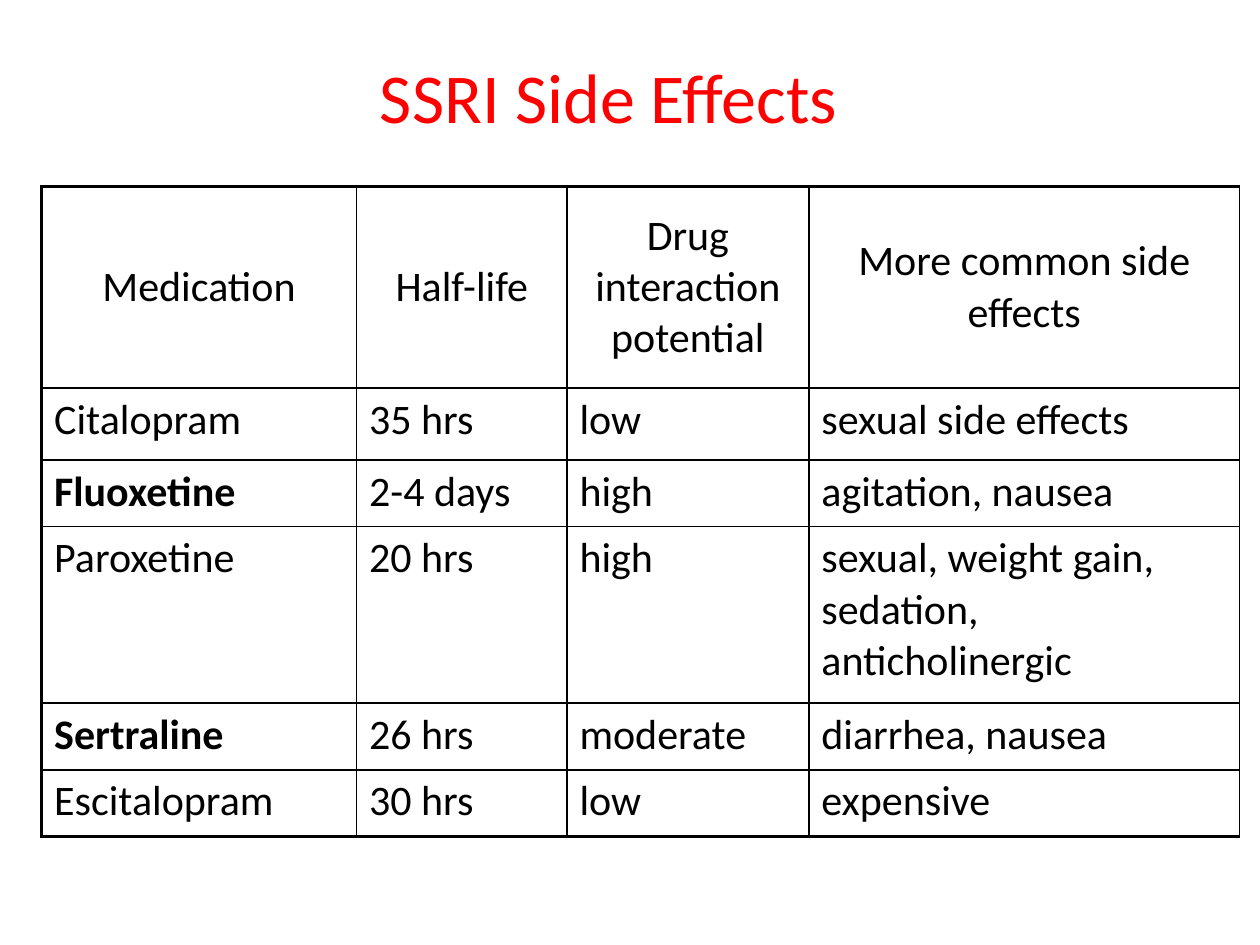
"""Build the SSRI side effects slide with one bordered comparison table."""
from dataclasses import dataclass

from lxml.etree import SubElement
from pptx import Presentation
from pptx.dml.color import RGBColor
from pptx.enum.text import MSO_ANCHOR as Anchor, PP_ALIGN as Align
from pptx.oxml.ns import qn
from pptx.util import Inches, Pt

TITLE = "SSRI Side Effects"
ROWS = [
    ("Medication", "Half-life", "Drug interaction potential", "More common side effects"),
    ("Citalopram", "35 hrs", "low", "sexual side effects"),
    ("Fluoxetine", "2-4 days", "high", "agitation, nausea"),
    ("Paroxetine", "20 hrs", "high", "sexual, weight gain, sedation, anticholinergic"),
    ("Sertraline", "26 hrs", "moderate", "diarrhea, nausea"),
    ("Escitalopram", "30 hrs", "low", "expensive"),
]
BOLD_NAMES = {"Fluoxetine", "Sertraline"}
COLUMN_WIDTHS = [2.5, 1.67, 1.92, 3.42]
ROW_HEIGHTS = [1.6, 0.57, 0.53, 1.4, 0.53, 0.53]
LEFT, TITLE_TOP, TABLE_TOP = 0.33, 0.25, 1.48
TITLE_WIDTH, TITLE_HEIGHT = 9, 1.02


@dataclass(frozen=True)
class Theme:
    font: str = "Calibri"
    title_color: str = "FF0000"
    ink: str = "000000"
    title_size: int = 40
    body_size: int = 24
    outer_line: float = 2.25
    inner_line: float = 1


THEME = Theme()


def write(text_frame, text, size, color, align, bold=False):
    text_frame.text = text
    text_frame.word_wrap = True
    paragraph = text_frame.paragraphs[0]
    paragraph.alignment = align
    font = paragraph.runs[0].font
    font.name, font.size, font.bold = THEME.font, Pt(size), bold
    font.color.rgb = RGBColor.from_string(color)


def set_borders(cell, widths):
    properties = cell._tc.get_or_add_tcPr()
    for side, width in widths.items():
        line = SubElement(properties, qn(f"a:ln{side}"), w=str(Pt(width)))
        fill = SubElement(line, qn("a:solidFill"))
        SubElement(fill, qn("a:srgbClr"), val=THEME.ink)


def add_title(slide):
    box = slide.shapes.add_textbox(
        Inches(LEFT), Inches(TITLE_TOP), Inches(TITLE_WIDTH), Inches(TITLE_HEIGHT))
    write(box.text_frame, TITLE, THEME.title_size, THEME.title_color, Align.CENTER)
    box.text_frame.vertical_anchor = Anchor.MIDDLE


def fill_cell(cell, text, row, column):
    header = row == 0
    write(cell.text_frame, text, THEME.body_size, THEME.ink,
          Align.CENTER if header else Align.LEFT, text in BOLD_NAMES)
    cell.vertical_anchor = Anchor.MIDDLE if header else Anchor.TOP
    cell.margin_left = cell.margin_right = Inches(0.1)
    cell.margin_top = cell.margin_bottom = Inches(0.15 if header else 0.05)
    outer, inner = THEME.outer_line, THEME.inner_line
    set_borders(cell, {
        "L": outer if column == 0 else inner,
        "R": inner,
        "T": outer if header else inner,
        "B": outer if row == len(ROWS) - 1 else inner,
    })
    cell.fill.background()


def add_medication_table(slide):
    table = slide.shapes.add_table(
        len(ROWS), len(COLUMN_WIDTHS), Inches(LEFT), Inches(TABLE_TOP),
        Inches(sum(COLUMN_WIDTHS)), Inches(sum(ROW_HEIGHTS))).table
    table.first_row = table.horz_banding = False
    for column, width in zip(table.columns, COLUMN_WIDTHS):
        column.width = Inches(width)
    for row, height in zip(table.rows, ROW_HEIGHTS):
        row.height = Inches(height)
    for row, texts in enumerate(ROWS):
        for column, text in enumerate(texts):
            fill_cell(table.cell(row, column), text, row, column)


def main():
    presentation = Presentation()
    presentation.slide_width, presentation.slide_height = Inches(10), Inches(7.5)
    slide = presentation.slides.add_slide(presentation.slide_layouts[6])
    add_title(slide)
    add_medication_table(slide)
    presentation.save("out.pptx")


if __name__ == "__main__":
    main()
